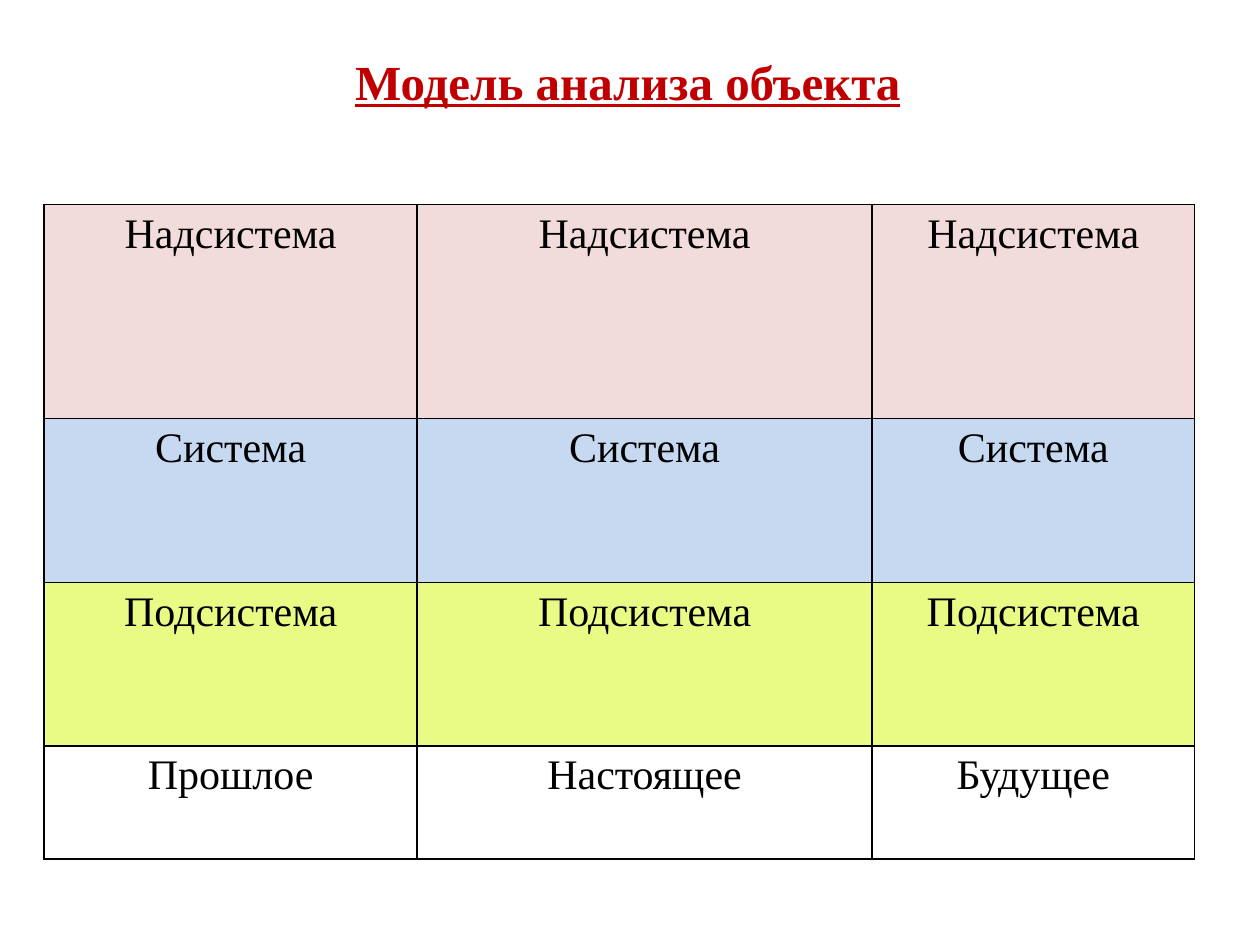
import pptx
import pptx.dml.color
import pptx.enum.text
import pptx.oxml
import pptx.oxml.ns
import pptx.util

Cm = pptx.util.Cm
Pt = pptx.util.Pt

COLORS = {
    "title": "C00000",
    "text": "000000",
    "border": "000000",
    "supersystem": "F2DCDB",
    "system": "C6D9F1",
    "subsystem": "EAFB85",
}
TITLE_FONT = {"name": "Times New Roman", "size": Pt(28), "bold": True, "underline": True}
CELL_FONT = {"name": "Times New Roman", "size": Pt(24), "bold": False}

COLUMN_WIDTHS = (7.52, 9.17, 6.5)
# Row height, fill colour, cell texts
ROWS = (
    (4.32, "supersystem", ["Надсистема"] * 3),
    (3.3, "system", ["Система"] * 3),
    (3.3, "subsystem", ["Подсистема"] * 3),
    (2.28, None, ["Прошлое", "Настоящее", "Будущее"]),
)


def rgb(color):
    return pptx.dml.color.RGBColor.from_string(COLORS[color])


def write_text(text_frame, text, font_values, color):
    paragraph = text_frame.paragraphs[0]
    run = paragraph.add_run()
    run.text = text
    for attribute, value in font_values.items():
        setattr(run.font, attribute, value)
    run.font.color.rgb = rgb(color)
    return paragraph


def add_borders(cell, width=Pt(1)):
    properties = cell._tc.get_or_add_tcPr()
    for side in ("lnL", "lnR", "lnT", "lnB"):
        properties.append(pptx.oxml.parse_xml(
            f'<a:{side} {pptx.oxml.ns.nsdecls("a")} w="{width}"><a:solidFill>'
            f'<a:srgbClr val="{COLORS["border"]}"/></a:solidFill></a:{side}>'
        ))


def add_title(slide, left, top, width, height):
    shape = slide.shapes.add_textbox(left, top, width, height)
    shape.text_frame.word_wrap = True
    write_text(shape.text_frame, "Модель анализа объекта", TITLE_FONT, "title")


def fill_cell(cell, text, fill_color):
    add_borders(cell)
    if fill_color:
        cell.fill.solid()
        cell.fill.fore_color.rgb = rgb(fill_color)
    else:
        cell.fill.background()
    paragraph = write_text(cell.text_frame, text, CELL_FONT, "text")
    paragraph.alignment = pptx.enum.text.PP_ALIGN.CENTER


def add_system_table(slide, left, top, width, height):
    """Add the grid of system levels (rows) against time (columns)."""
    table = slide.shapes.add_table(
        len(ROWS), len(COLUMN_WIDTHS), left, top, width, height
    ).table
    table.first_row = table.horz_banding = False
    for column, column_width in zip(table.columns, COLUMN_WIDTHS):
        column.width = Cm(column_width)
    for row, (row_height, fill_color, texts) in zip(table.rows, ROWS):
        row.height = Cm(row_height)
        for cell, text in zip(row.cells, texts):
            fill_cell(cell, text, fill_color)


def main():
    presentation = pptx.Presentation()
    presentation.slide_width = Cm(25.4)
    presentation.slide_height = Cm(19.05)
    slide = presentation.slides.add_slide(presentation.slide_layouts[6])
    add_title(slide, Cm(6.91), Cm(0.91), Cm(14), Cm(1.45))
    add_system_table(
        slide, Cm(0.89), Cm(4.12),
        Cm(sum(COLUMN_WIDTHS)), Cm(sum(row[0] for row in ROWS)),
    )
    presentation.save("out.pptx")


if __name__ == "__main__":
    main()
